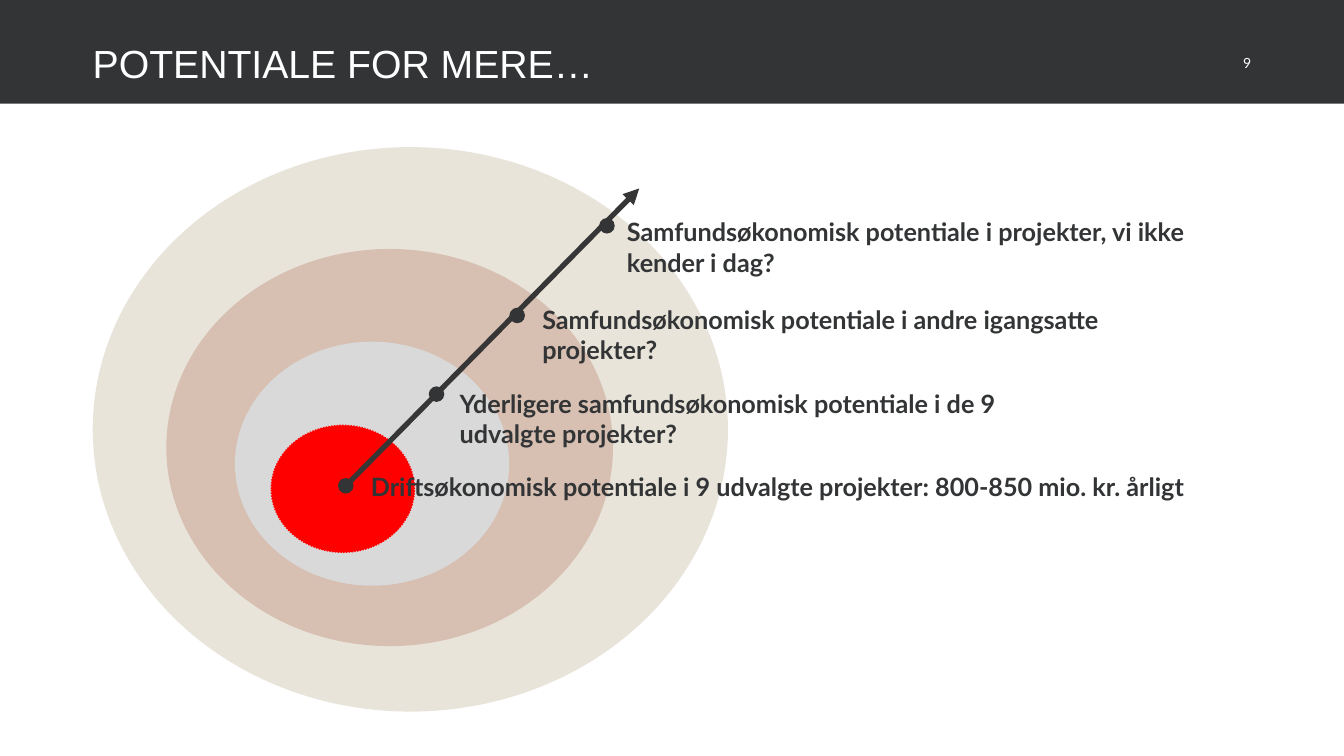
import pptx
import pptx.util
import pptx.dml.color
import pptx.enum.dml
import pptx.enum.shapes
import pptx.enum.text
import pptx.oxml
import pptx.oxml.ns
from pptx.util import Inches

COLOURS = {
    "dark": "323435",
    "arrow": "373636",
    "white": "FFFFFF",
    "sand": "E9E4DA",
    "clay": "D7BFB2",
    "grey": "D9D9D9",
    "red": "FF0000",
}
SHAPES = pptx.enum.shapes.MSO_SHAPE
ANCHORS = pptx.enum.text.MSO_ANCHOR
ALIGNMENTS = pptx.enum.text.PP_ALIGN


class SlideBuilder:
    label_format = {"name": "Lato", "size": pptx.util.Pt(18), "bold": True}
    title_format = {"name": "Arial", "size": pptx.util.Pt(28)}
    number_format = {"name": "Lato", "size": pptx.util.Pt(10)}

    def __init__(self, slide):
        self.slide = slide

    def colour(self, name):
        return pptx.dml.color.RGBColor.from_string(COLOURS[name])

    def shape(self, kind, left, top, width, height, fill, outlined=False, dash=None):
        shape = self.slide.shapes.add_shape(
            kind, Inches(left), Inches(top), Inches(width), Inches(height))
        shape.shadow.inherit = False
        shape.fill.solid()
        shape.fill.fore_color.rgb = self.colour(fill)
        if outlined:
            shape.line.color.rgb = self.colour(fill)
            shape.line.width = pptx.util.Pt(1)
            if dash is not None:
                shape.line.dash_style = dash
        else:
            shape.line.fill.background()

    def dot(self, centre_x, centre_y, size=0.14):
        self.shape(SHAPES.OVAL, centre_x - size / 2, centre_y - size / 2,
                   size, size, "dark", outlined=True)

    def text(self, text, left, top, width, height, font_format, colour="dark",
             inset=True, anchor=ANCHORS.TOP, alignment=ALIGNMENTS.LEFT):
        box = self.slide.shapes.add_textbox(
            Inches(left), Inches(top), Inches(width), Inches(height))
        frame = box.text_frame
        frame.word_wrap = True
        frame.vertical_anchor = anchor
        if not inset:
            for side in ("left", "top", "right", "bottom"):
                setattr(frame, f"margin_{side}", 0)
        paragraph = frame.paragraphs[0]
        paragraph.alignment = alignment
        run = paragraph.add_run()
        run.text = text
        for attribute, value in font_format.items():
            setattr(run.font, attribute, value)
        run.font.color.rgb = self.colour(colour)

    def arrow(self, start_x, start_y, end_x, end_y):
        connector = self.slide.shapes.add_connector(
            pptx.enum.shapes.MSO_CONNECTOR.STRAIGHT,
            Inches(start_x), Inches(start_y), Inches(end_x), Inches(end_y))
        connector.line.color.rgb = self.colour("arrow")
        connector.line.width = pptx.util.Pt(3.75)
        line = connector.line._get_or_add_ln()
        line.append(pptx.oxml.parse_xml(
            f'<a:tailEnd {pptx.oxml.ns.nsdecls("a")} type="triangle"/>'))
        connector._element.spPr.append(pptx.oxml.parse_xml(
            f'<a:effectLst {pptx.oxml.ns.nsdecls("a")}/>'))


def main():
    presentation = pptx.Presentation()
    presentation.slide_width = Inches(13.33)
    presentation.slide_height = Inches(7.5)
    slide = presentation.slides.add_slide(presentation.slide_layouts[6])
    builder = SlideBuilder(slide)

    builder.shape(SHAPES.RECTANGLE, 0, 0, 13.33, 1.03, "dark")
    builder.text("9", 12.06, 0.36, 0.35, 0.52, builder.number_format, "white",
                 inset=False, anchor=ANCHORS.MIDDLE, alignment=ALIGNMENTS.RIGHT)
    builder.text("POTENTIALE FOR MERE…", 0.92, 0.36, 11.1, 0.52,
                 builder.title_format, "white", inset=False, anchor=ANCHORS.MIDDLE)

    rings = [
        (0.92, 1.46, 6.3, 5.6, "sand"),
        (1.65, 2.47, 4.43, 3.94, "clay"),
        (2.33, 3.39, 2.72, 2.42, "grey"),
    ]
    for ring in rings:
        builder.shape(SHAPES.OVAL, *ring)
    builder.shape(SHAPES.OVAL, 2.69, 4.22, 1.42, 1.26, "red", outlined=True,
                  dash=pptx.enum.dml.MSO_LINE.ROUND_DOT)

    builder.arrow(3.43, 4.82, 6.34, 1.87)
    levels = [
        (3.43, 4.82, 3.58, 4.63, 8.83, 0.4,
         "Driftsøkonomisk potentiale i 9 udvalgte projekter: 800-850 mio. kr. årligt"),
        (4.33, 3.91, 4.46, 3.8, 6.37, 0.71,
         "Yderligere samfundsøkonomisk potentiale i de 9 udvalgte projekter?"),
        (5.13, 3.13, 5.28, 2.97, 5.91, 0.71,
         "Samfundsøkonomisk potentiale i andre igangsatte projekter?"),
        (6.02, 2.24, 6.12, 2.1, 5.91, 0.71,
         "Samfundsøkonomisk potentiale i projekter, vi ikke kender i dag?"),
    ]
    for dot_x, dot_y, left, top, width, height, label in levels:
        builder.dot(dot_x, dot_y)
        builder.text(label, left, top, width, height, builder.label_format)

    presentation.save("out.pptx")


if __name__ == "__main__":
    main()
